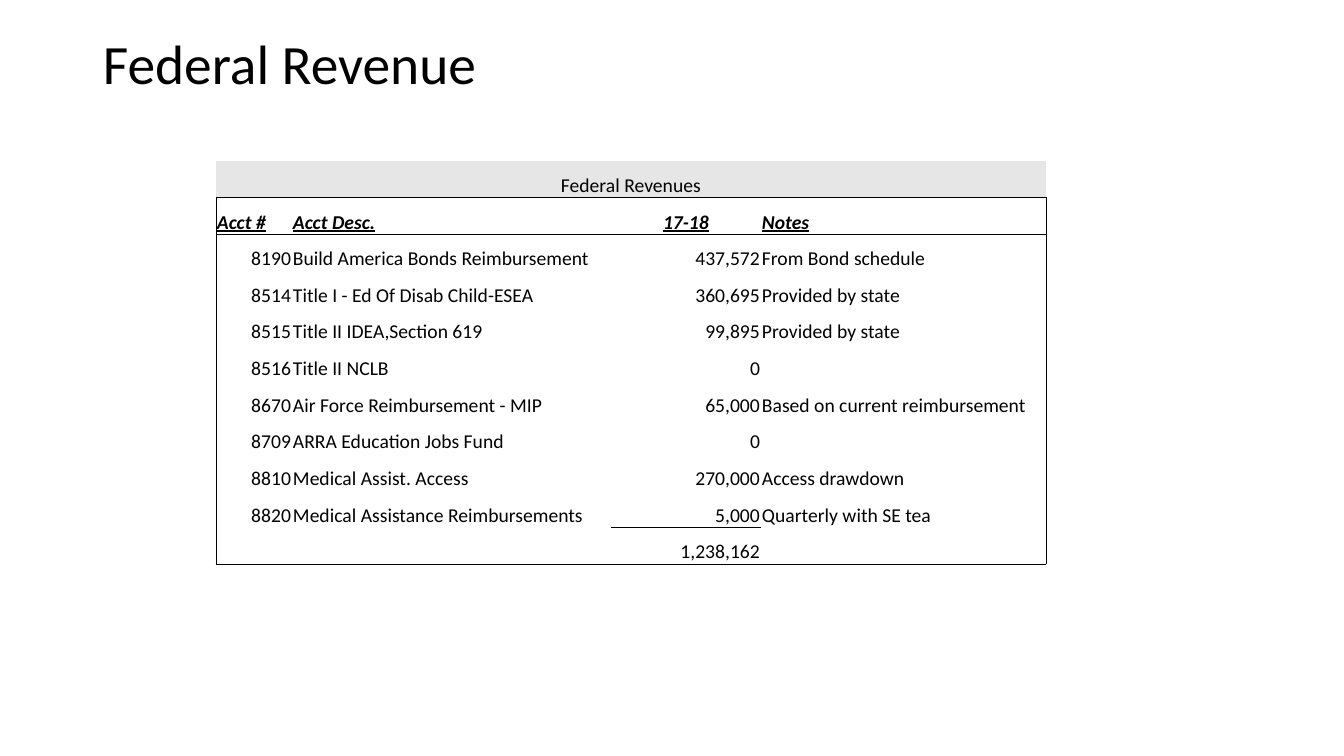
from dataclasses import dataclass

from lxml.etree import SubElement
from pptx import Presentation
from pptx.dml.color import RGBColor
from pptx.enum.text import MSO_ANCHOR, PP_ALIGN
from pptx.oxml.ns import qn
from pptx.util import Pt

HEADING = "Federal Revenue"
CAPTION = "Federal Revenues"
COLUMNS = ("Acct #", "Acct Desc.", "17-18", "Notes")
ACCOUNTS = [
    ("8190", "Build America Bonds Reimbursement", "437,572", "From Bond schedule"),
    ("8514", "Title I - Ed Of Disab Child-ESEA", "360,695", "Provided by state"),
    ("8515", "Title II IDEA,Section 619", "99,895", "Provided by state"),
    ("8516", "Title II NCLB", "0", ""),
    ("8670", "Air Force Reimbursement - MIP", "65,000", "Based on current reimbursement"),
    ("8709", "ARRA Education Jobs Fund", "0", ""),
    ("8810", "Medical Assist. Access", "270,000", "Access drawdown"),
    ("8820", "Medical Assistance Reimbursements", "5,000", "Quarterly with SE tea"),
]
TOTAL = ("", "", "1,238,162", "")


@dataclass(frozen=True)
class Theme:
    font: str = "Calibri"
    ink: str = "000000"
    band: str = "E7E6E6"
    heading_size: float = 39.6
    cell_size: float = 14
    rule_width: float = 0.5


THEME = Theme()
SLIDE_SIZE = (1344, 756)
HEADING_BOX = (93, 40, 1159, 53)
TABLE_LEFT, TABLE_TOP, TABLE_HEIGHT = 216, 161, 403
COLUMN_WIDTHS = (76, 319, 150, 285)
COLUMN_ALIGN = (PP_ALIGN.RIGHT, PP_ALIGN.LEFT, PP_ALIGN.RIGHT, PP_ALIGN.LEFT)
LABEL_ALIGN = (PP_ALIGN.LEFT, PP_ALIGN.LEFT, PP_ALIGN.CENTER, PP_ALIGN.LEFT)
AMOUNT = 2
PLAIN_TABLE = "{2D5ABB26-0587-4C30-8999-92F81FD0307C}"


def px(length):
    return round(length * 914400 / 100.8)


def write(paragraph, wording, size, align=PP_ALIGN.LEFT, label=False):
    paragraph.alignment = align
    if not wording:
        return
    run = paragraph.add_run()
    run.text = wording
    run.font.name = THEME.font
    run.font.size = Pt(size)
    run.font.color.rgb = RGBColor.from_string(THEME.ink)
    run.font.bold = run.font.italic = run.font.underline = label


def edges(row, column, last_row):
    rules = {
        "L": row > 0 and column == 0,
        "R": row > 0 and column == len(COLUMNS) - 1,
        "T": row == 1 or (row == last_row and column == AMOUNT),
        "B": row in (0, last_row) or (row == last_row - 1 and column == AMOUNT),
    }
    return [side for side, drawn in rules.items() if drawn]


def draw_edges(cell, sides):
    properties = cell._tc.get_or_add_tcPr()
    for side in sides:
        line = SubElement(properties, qn(f"a:ln{side}"), w=str(Pt(THEME.rule_width)))
        fill = SubElement(line, qn("a:solidFill"))
        SubElement(fill, qn("a:srgbClr"), val=THEME.ink)


def add_heading(slide):
    frame = slide.shapes.add_textbox(*map(px, HEADING_BOX)).text_frame
    frame.word_wrap = True
    frame.vertical_anchor = MSO_ANCHOR.MIDDLE
    frame.paragraphs[0].line_spacing = 0.9
    write(frame.paragraphs[0], HEADING, THEME.heading_size)


def add_revenues(slide):
    rows = [(CAPTION, "", "", ""), COLUMNS, *ACCOUNTS, TOTAL]
    table = slide.shapes.add_table(
        len(rows), len(COLUMNS), px(TABLE_LEFT), px(TABLE_TOP),
        px(sum(COLUMN_WIDTHS)), px(TABLE_HEIGHT),
    ).table
    table.first_row = table.horz_banding = False
    table._tbl.tblPr.find(qn("a:tableStyleId")).text = PLAIN_TABLE
    for column, width in zip(table.columns, COLUMN_WIDTHS):
        column.width = px(width)
    for table_row in table.rows:
        table_row.height = px(TABLE_HEIGHT / len(rows))

    alignments = [(PP_ALIGN.CENTER,) * len(COLUMNS), LABEL_ALIGN]
    alignments += [COLUMN_ALIGN] * (len(rows) - 2)
    for r, (wordings, aligns) in enumerate(zip(rows, alignments)):
        for c, (wording, align) in enumerate(zip(wordings, aligns)):
            cell = table.cell(r, c)
            cell.margin_left = cell.margin_right = cell.margin_top = px(1)
            cell.margin_bottom = 0
            cell.vertical_anchor = MSO_ANCHOR.BOTTOM
            draw_edges(cell, edges(r, c, len(rows) - 1))
            if r == 0:
                cell.fill.solid()
                cell.fill.fore_color.rgb = RGBColor.from_string(THEME.band)
            else:
                cell.fill.background()
            write(cell.text_frame.paragraphs[0], wording, THEME.cell_size, align, r == 1)
    table.cell(0, 0).merge(table.cell(0, len(COLUMNS) - 1))


def main():
    deck = Presentation()
    deck.slide_width, deck.slide_height = map(px, SLIDE_SIZE)
    slide = deck.slides.add_slide(deck.slide_layouts[6])
    add_heading(slide)
    add_revenues(slide)
    deck.save("out.pptx")


if __name__ == "__main__":
    main()
